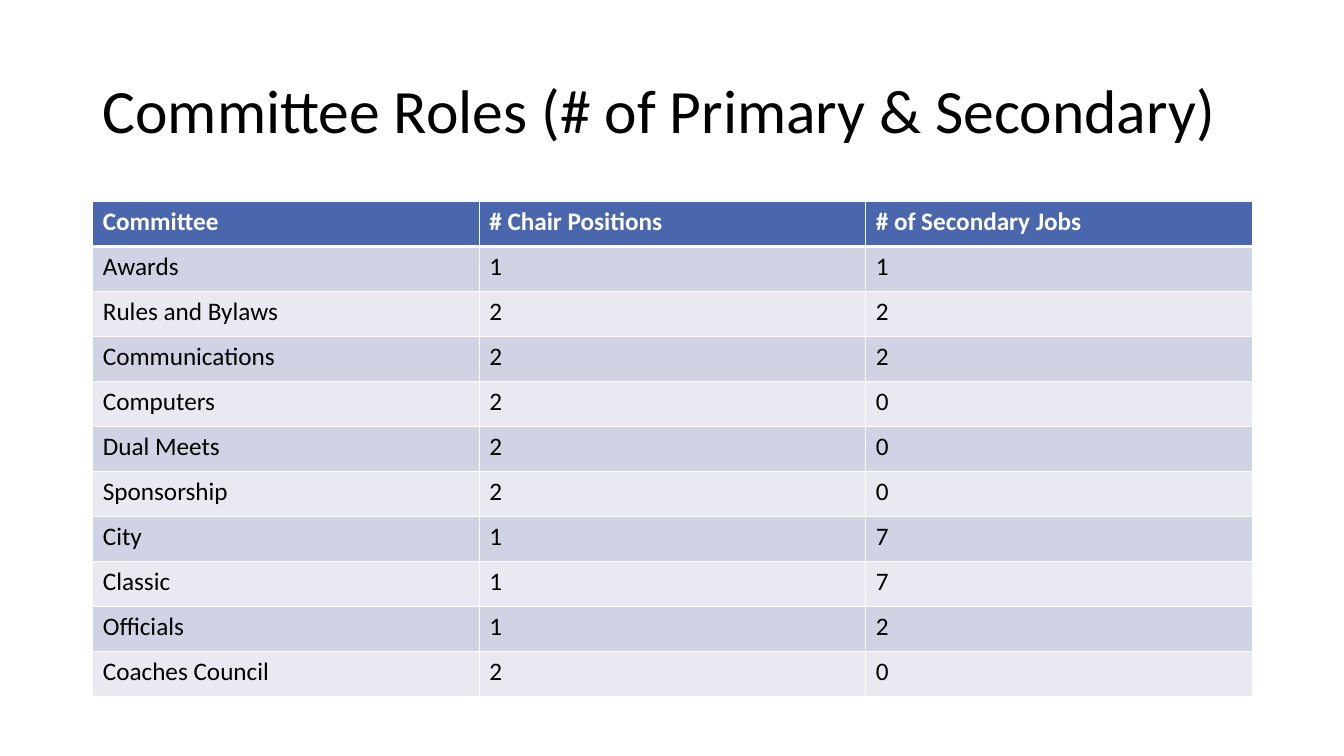
from lxml import etree
from pptx import Presentation
from pptx.dml.color import RGBColor
from pptx.enum.text import MSO_ANCHOR
from pptx.oxml.ns import qn
from pptx.util import Inches, Pt

MIDDLE = MSO_ANCHOR.MIDDLE
FONT = "Calibri"
WHITE, BLACK, BLUE = "FFFFFF", "000000", "4A66AC"
BANDS = ("D0D3E3", "E9EAF1")
LEFT, WIDTH = 0.92, 11.5
TITLE = "Committee Roles (# of Primary & Secondary)"
HEAD = ("Committee", "# Chair Positions", "# of Secondary Jobs")
ROLES = (
    ("Awards", 1, 1),
    ("Rules and Bylaws", 2, 2),
    ("Communications", 2, 2),
    ("Computers", 2, 0),
    ("Dual Meets", 2, 0),
    ("Sponsorship", 2, 0),
    ("City", 1, 7),
    ("Classic", 1, 7),
    ("Officials", 1, 2),
    ("Coaches Council", 2, 0),
)


def color(code):
    """Turn a hex string into a colour."""
    return RGBColor.from_string(code)


def add_run(para, text, size, code, bold=False):
    """Add one styled run to a paragraph."""
    run = para.add_run()
    run.text = text
    font = run.font
    font.name, font.size, font.bold = FONT, Pt(size), bold
    font.color.rgb = color(code)


def add_title(slide):
    """Add the slide title."""
    box = slide.shapes.add_textbox(
        Inches(LEFT), Inches(0.4), Inches(WIDTH), Inches(1.45))
    frame = box.text_frame
    frame.word_wrap = True
    frame.vertical_anchor = MIDDLE
    para = frame.paragraphs[0]
    para.line_spacing = 0.9
    add_run(para, TITLE, 44, BLACK)


def add_edges(cell, top, bottom):
    """Draw white borders around a cell, with widths in points."""
    props = cell._tc.get_or_add_tcPr()
    for side, width in (("L", 1), ("R", 1), ("T", top), ("B", bottom)):
        line = etree.SubElement(props, qn(f"a:ln{side}"), w=str(Pt(width)))
        fill = etree.SubElement(line, qn("a:solidFill"))
        etree.SubElement(fill, qn("a:srgbClr"), val=WHITE)


def fill_cell(cell, text, row):
    """Style a cell by its row and write its text."""
    head = row == 0
    add_edges(cell, 3 if row == 1 else 1, 3 if head else 1)
    cell.fill.solid()
    cell.fill.fore_color.rgb = color(BLUE if head else BANDS[(row - 1) % 2])
    add_run(cell.text_frame.paragraphs[0], str(text), 18,
            WHITE if head else BLACK, head)


def add_roles(slide):
    """Add the table of committee roles."""
    rows = (HEAD, *ROLES)
    table = slide.shapes.add_table(
        len(rows), len(HEAD), Inches(LEFT), Inches(2),
        Inches(WIDTH), Inches(4.91)).table
    for row, values in enumerate(rows):
        for col, value in enumerate(values):
            fill_cell(table.cell(row, col), value, row)


def main():
    """Build and save the slide."""
    deck = Presentation()
    deck.slide_width, deck.slide_height = Inches(13.33), Inches(7.5)
    slide = deck.slides.add_slide(deck.slide_layouts[6])
    add_title(slide)
    add_roles(slide)
    deck.save("out.pptx")


if __name__ == "__main__":
    main()
